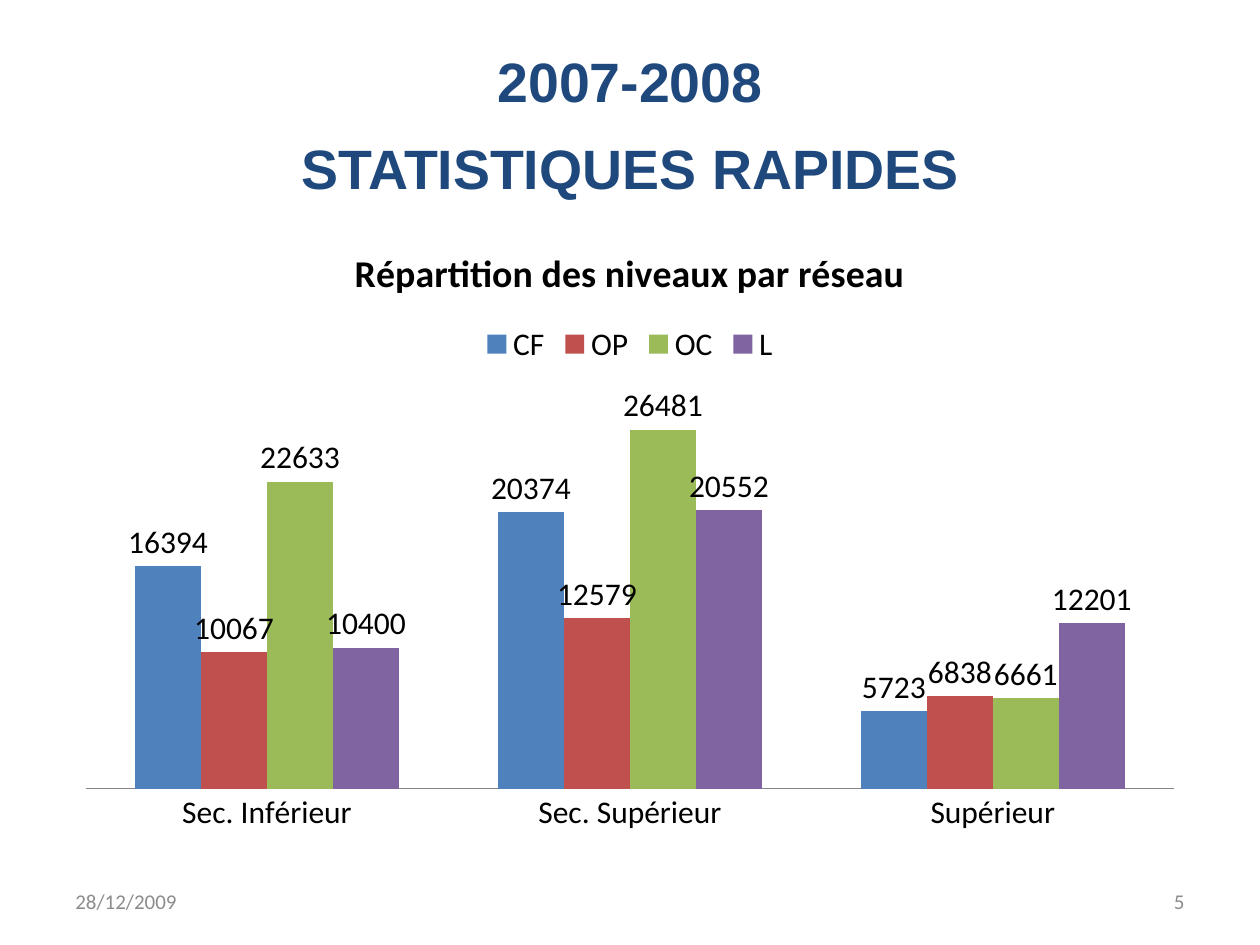
from pptx import Presentation
from pptx import util as u
from pptx.chart import data as chart_data
from pptx.dml.color import RGBColor
from pptx.enum import chart as ch, text

NAVY = RGBColor(0x1F, 0x49, 0x7D)
BLACK = RGBColor(0, 0, 0)
GREY = RGBColor(0x8C, 0x8C, 0x8C)
AXIS_GREY = RGBColor(0x86, 0x86, 0x86)
NETWORKS = {
    "CF": ((16394, 20374, 5723), RGBColor(0x4F, 0x81, 0xBD)),
    "OP": ((10067, 12579, 6838), RGBColor(0xC0, 0x50, 0x4D)),
    "OC": ((22633, 26481, 6661), RGBColor(0x9B, 0xBB, 0x59)),
    "L": ((10400, 20552, 12201), RGBColor(0x80, 0x64, 0xA2)),
}
LEVELS = ("Sec. Inférieur", "Sec. Supérieur", "Supérieur")
WIDTH, HEIGHT = u.Inches(10), u.Inches(7.5)
MARGIN = 0.05


def box(left, top, width, height):
    """Turn shares of the slide's size into left, top, width and height."""
    return int(left * WIDTH), int(top * HEIGHT), int(width * WIDTH), int(height * HEIGHT)


def style(font, size, color, name="Calibri", bold=False):
    """Give a font its size, colour, family and weight."""
    font.size, font.name, font.bold = u.Pt(size), name, bold
    font.color.rgb = color


def place_title(slide, area):
    """Fill the title placeholder with the two centred lines in small capitals."""
    title = slide.shapes.title
    title.left, title.top, title.width, title.height = area
    frame = title.text_frame
    frame.text = "2007-2008\vstatistiques rapides"
    frame.vertical_anchor = text.MSO_ANCHOR.MIDDLE
    heading = frame.paragraphs[0]
    heading.alignment = text.PP_ALIGN.CENTER
    heading.line_spacing = 1.04
    style(heading.font, 39.6, NAVY, "Arial", True)
    for run in heading.runs:
        style(run.font, 39.6, NAVY, "Arial", True)
        run._r.get_or_add_rPr().set("cap", "small")


def place_chart(slide, area):
    """Draw the clustered columns of pupils by level and network."""
    figures = chart_data.CategoryChartData()
    figures.categories = LEVELS
    for network, (counts, _) in NETWORKS.items():
        figures.add_series(network, counts)
    chart = slide.shapes.add_chart(ch.XL_CHART_TYPE.COLUMN_CLUSTERED, *area, figures).chart
    style(chart.font, 18, BLACK)

    chart.has_title = True
    chart.chart_title.include_in_layout = False
    chart.chart_title.text_frame.text = "Répartition des niveaux par réseau"
    style(chart.chart_title.text_frame.paragraphs[0].runs[0].font, 21.6, BLACK, bold=True)
    chart.has_legend = True
    chart.legend.position = ch.XL_LEGEND_POSITION.TOP
    chart.legend.include_in_layout = False

    counts_axis, levels_axis = chart.value_axis, chart.category_axis
    counts_axis.visible = False
    counts_axis.has_major_gridlines = False
    counts_axis.minimum_scale, counts_axis.maximum_scale = 0, 30000
    levels_axis.major_tick_mark = ch.XL_TICK_MARK.NONE
    levels_axis.format.line.color.rgb = AXIS_GREY
    levels_axis.format.line.width = u.Pt(0.75)

    plot = chart.plots[0]
    plot.vary_by_categories = False
    plot.gap_width, plot.overlap = 150, 0
    for series in plot.series:
        series.format.fill.solid()
        series.format.fill.fore_color.rgb = NETWORKS[series.name][1]
        series.data_labels.show_value = True
        series.data_labels.position = ch.XL_LABEL_POSITION.OUTSIDE_END
        style(series.data_labels.font, 18, BLACK)


def place_footer(slide, area, wording, alignment):
    """Write one grey footer entry in the given box."""
    frame = slide.shapes.add_textbox(*area).text_frame
    frame.word_wrap = True
    frame.vertical_anchor = text.MSO_ANCHOR.MIDDLE
    frame.text = wording
    entry = frame.paragraphs[0]
    entry.alignment = alignment
    style(entry.runs[0].font, 12, GREY)


def main():
    """Build and save the slide."""
    deck = Presentation()
    deck.slide_width, deck.slide_height = WIDTH, HEIGHT
    slide = deck.slides.add_slide(deck.slide_layouts[5])
    content = 1 - 2 * MARGIN
    footer = 0.233
    place_chart(slide, box(MARGIN, 0.2333, content, 0.66))
    place_footer(slide, box(MARGIN, 0.9267, footer, 0.0533),
                 "28/12/2009", text.PP_ALIGN.LEFT)
    place_footer(slide, box(1 - MARGIN - footer, 0.9267, footer, 0.0533),
                 "5", text.PP_ALIGN.RIGHT)
    place_title(slide, box(MARGIN, 0.04, content, 0.1667))
    deck.save("out.pptx")


if __name__ == "__main__":
    main()
